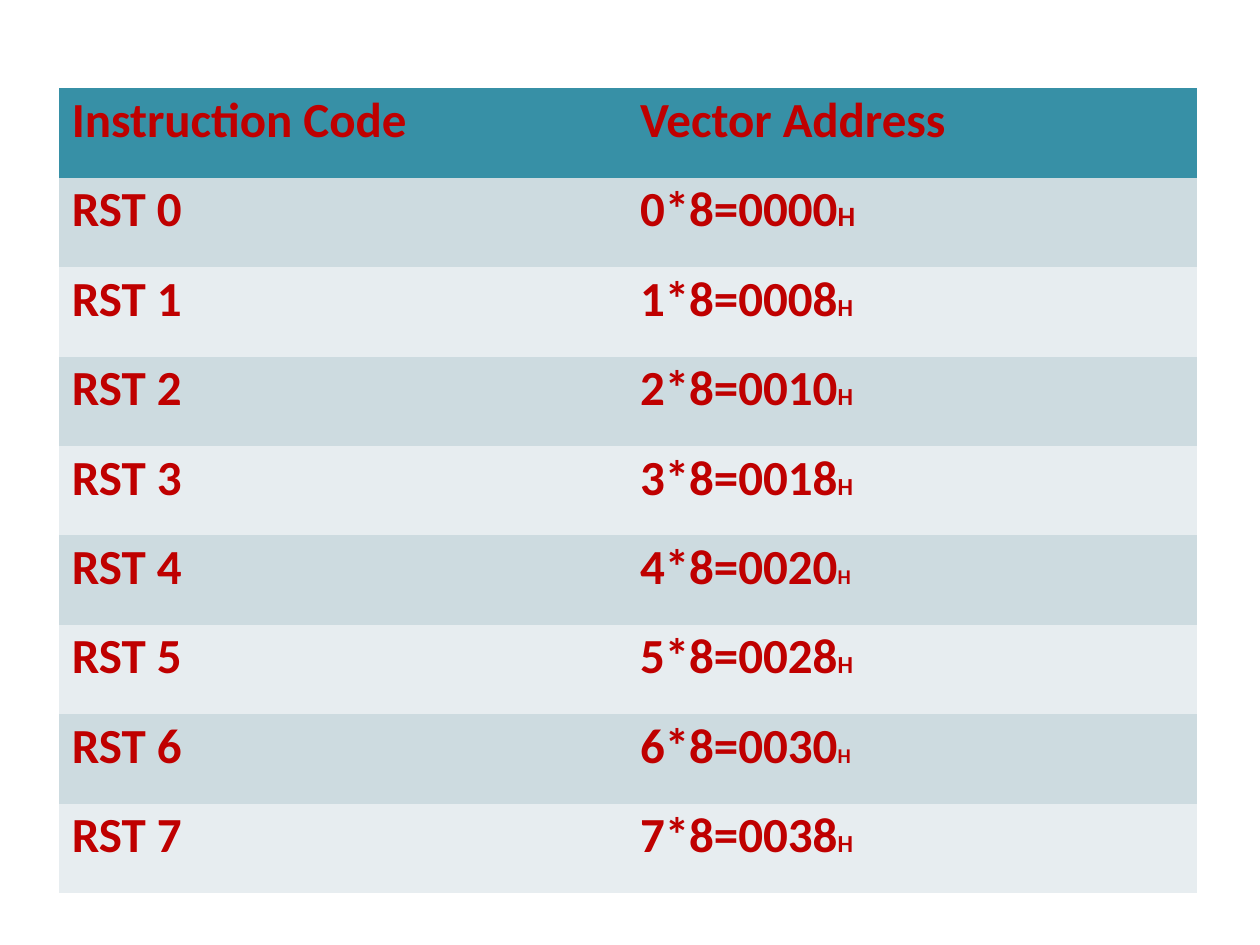
from dataclasses import dataclass

from pptx import Presentation
from pptx.dml.color import RGBColor
from pptx.table import Table
from pptx.util import Inches, Pt


@dataclass(frozen=True)
class Theme:
    font: str = "Calibri"
    size: int = 28
    ink: str = "BF0000"
    head: str = "3790A6"
    bands: tuple[str, str] = ("CDDBE0", "E7EDF0")


@dataclass(frozen=True)
class Column:
    width: float
    inset: float


@dataclass(frozen=True)
class Row:
    code: str
    address: str
    fill: str
    unit: str = ""
    small: int = 14


THEME = Theme()
COLUMNS = (Column(3.89, 0.1), Column(5.14, 0.72))
HEIGHT = 0.71
# Size of the trailing H where it is not the usual one
SMALL = {0: 16, 4: 12, 6: 12}


def fill_cell(table: Table, line: int, side: int, text: str, row: Row) -> None:
    cell = table.cell(line, side)
    cell.fill.solid()
    cell.fill.fore_color.rgb = RGBColor.from_string(row.fill)
    cell.margin_left = Inches(COLUMNS[side].inset)
    cell.margin_top = Inches(0.02)
    cell.margin_right = cell.margin_bottom = 0
    para = cell.text_frame.paragraphs[0]
    para.add_run().text = text
    font = para.font
    font.name, font.size, font.bold = THEME.font, Pt(THEME.size), True
    font.color.rgb = RGBColor.from_string(THEME.ink)


def draw_row(table: Table, line: int, row: Row) -> None:
    table.rows[line].height = Inches(HEIGHT)
    fill_cell(table, line, 0, row.code, row)
    fill_cell(table, line, 1, row.address, row)
    if row.unit:
        unit = table.cell(line, 1).text_frame.paragraphs[0].add_run()
        unit.text = row.unit
        unit.font.size = Pt(row.small)


def main() -> None:
    deck = Presentation()
    deck.slide_width, deck.slide_height = Inches(10), Inches(7.5)
    slide = deck.slides.add_slide(deck.slide_layouts[6])

    # Each restart vector lies at eight times its number, in hex
    rows = [Row("Instruction Code", "Vector Address", THEME.head)]
    rows += [
        Row(f"RST {n}", f"{n}*8={n * 8:04X}", THEME.bands[n % 2], "H", SMALL.get(n, 14))
        for n in range(8)
    ]

    # Table
    width = sum(column.width for column in COLUMNS)
    frame = slide.shapes.add_table(
        len(rows), len(COLUMNS), Inches(0.47), Inches(0.7),
        Inches(width), Inches(HEIGHT * len(rows)),
    )
    table = frame.table
    for side, column in enumerate(COLUMNS):
        table.columns[side].width = Inches(column.width)
    # Plain cells: the preset style would add white rules
    style = table._tbl.tblPr.find("{*}tableStyleId")
    style.text = "{2D5ABB26-0587-4C30-8999-92F81FD0307C}"
    for line, row in enumerate(rows):
        draw_row(table, line, row)

    deck.save("out.pptx")


if __name__ == "__main__":
    main()
